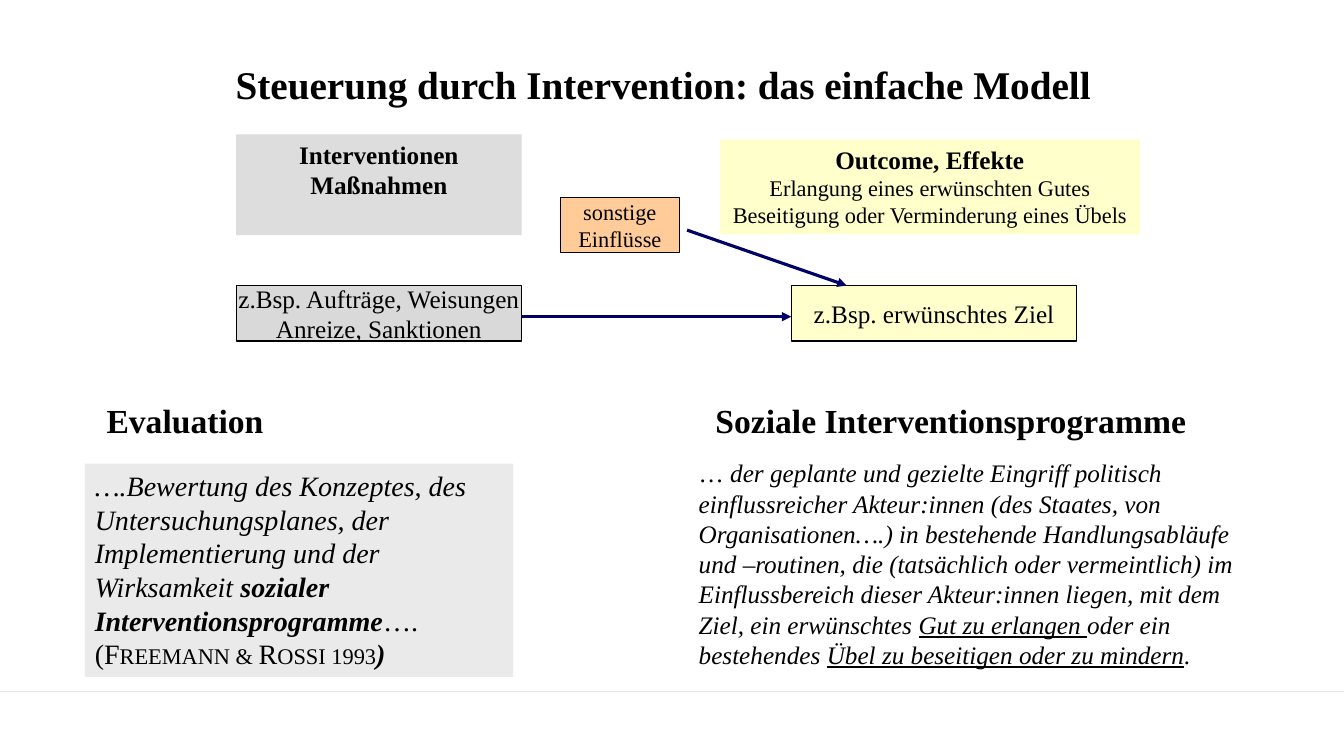
from lxml import etree
from pptx import Presentation
from pptx.dml.color import RGBColor
from pptx.enum.shapes import MSO_CONNECTOR, MSO_SHAPE
from pptx.enum.text import MSO_ANCHOR, PP_ALIGN
from pptx.oxml.ns import qn
from pptx.util import Inches, Pt

FONT = "Times New Roman"
BLACK, NAVY, YELLOW = "000000", "000066", "FFFFCC"
COLS, ROWS = 160, 90
BOX_W, BOX_H = 34, 6.6
LEFT_X, GOAL_X, CHAIN_Y = 28.1, 94.2, 34


def grid(value):
    """Convert grid cells (square, 12 per inch) to a length."""
    return Inches(value / 12)


def rgb(color):
    return RGBColor.from_string(color)


def add_runs(p, runs):
    """Add (text, style) runs; style letters: b, i, u and c for small caps."""
    for text, style in runs:
        for i, line in enumerate(text.split("\n")):
            if i:
                p.add_line_break()
            if not line:
                continue
            r = p.add_run()
            r.text = line
            if "b" in style:
                r.font.bold = True
            if "i" in style:
                r.font.italic = True
            if "u" in style:
                r.font.underline = True
            if "c" in style:
                r._r.get_or_add_rPr().set("cap", "small")


def write(shape, paragraphs, align, anchor, wrap):
    """Fill a shape with (size, bold, runs) paragraphs."""
    tf = shape.text_frame
    tf.word_wrap = wrap
    tf.vertical_anchor = anchor
    for i, (size, bold, runs) in enumerate(paragraphs):
        p = tf.paragraphs[0] if i == 0 else tf.add_paragraph()
        p.alignment = align
        p.font.name = FONT
        p.font.size = Pt(size)
        p.font.color.rgb = rgb(BLACK)
        p.font.bold = bold
        add_runs(p, runs)


def add_text(s, box, paragraphs, align=PP_ALIGN.LEFT, anchor=MSO_ANCHOR.TOP, wrap=True):
    shape = s.shapes.add_textbox(*map(grid, box))
    write(shape, paragraphs, align, anchor, wrap)


def add_box(s, box, fill, paragraphs, align=PP_ALIGN.CENTER, outlined=False):
    """Add a filled box; outlined boxes hold unwrapped text in the middle."""
    shape = s.shapes.add_shape(MSO_SHAPE.RECTANGLE, *map(grid, box))
    shape.shadow.inherit = False
    shape.fill.solid()
    shape.fill.fore_color.rgb = rgb(fill)
    if outlined:
        shape.line.color.rgb = rgb(BLACK)
        shape.line.width = Pt(0.75)
    else:
        shape.line.fill.background()
    anchor = MSO_ANCHOR.MIDDLE if outlined else MSO_ANCHOR.TOP
    write(shape, paragraphs, align, anchor, not outlined)


def add_line(s, ends, color, width, arrow=False):
    line = s.shapes.add_connector(MSO_CONNECTOR.STRAIGHT, *map(grid, ends))
    line.line.color.rgb = rgb(color)
    line.line.width = Pt(width)
    if arrow:
        etree.SubElement(line.line._get_or_add_ln(), qn("a:tailEnd"), type="triangle")
    etree.SubElement(line._element.spPr, qn("a:effectLst"))


def add_model(s):
    add_box(s, (LEFT_X, 16, BOX_W, 12), "DDDDDD",
            [(18, True, [("Interventionen\nMaßnahmen", "")])])
    add_box(s, (85.7, 16.6, 50, 11.3), YELLOW, [
        (18, True, [("Outcome, Effekte", "")]),
        (16, False, [("Erlangung eines erwünschten Gutes\n"
                      "Beseitigung oder Verminderung eines Übels", "")]),
    ])
    middle = CHAIN_Y + 3.7
    add_line(s, (LEFT_X + BOX_W, middle, GOAL_X, middle), NAVY, 2.25, arrow=True)
    for x, y, width, fill, size, text in [
        (LEFT_X, CHAIN_Y, BOX_W, "D9D9D9", 18, "z.Bsp. Aufträge, Weisungen\nAnreize, Sanktionen"),
        (GOAL_X, CHAIN_Y, BOX_W, YELLOW, 18, "z.Bsp. erwünschtes Ziel"),
        (66.7, 23.5, 14.2, "FFCC99", 16, "sonstige\nEinflüsse"),
    ]:
        add_box(s, (x, y, width, BOX_H), fill, [(size, False, [(text, "")])], outlined=True)
    add_line(s, (81.8, 27.4, 100.8, CHAIN_Y), NAVY, 2.25, arrow=True)


def add_definitions(s):
    for x, width, heading in [(11.5, 21.2, "Evaluation"),
                              (84, 59, "Soziale Interventionsprogramme")]:
        add_text(s, (x, 47, width, 6), [(24, True, [(heading, "")])], wrap=False)
    add_box(s, (10.1, 55.2, 51, 25.4), "EAEAEA", [(20, None, [
        ("….Bewertung des Konzeptes, des Untersuchungsplanes, der "
         "Implementierung und der Wirksamkeit ", "i"),
        ("sozialer Interventionsprogramme", "bi"),
        ("….\n(", ""),
        ("Freemann & Rossi 1993", "c"),
        (")", "bi"),
    ])], align=PP_ALIGN.LEFT)
    add_text(s, (82, 53.9, 70, 26.6), [(18, None, [
        ("… ", ""),
        ("der geplante und gezielte Eingriff politisch einflussreicher "
         "Akteur:innen (des Staates, von Organisationen….) in bestehende "
         "Handlungsabläufe und –routinen, die (tatsächlich oder vermeintlich) "
         "im Einflussbereich dieser Akteur:innen liegen, mit dem Ziel, ein "
         "erwünschtes ", "i"),
        ("Gut zu erlangen ", "iu"),
        ("oder ein bestehendes ", "i"),
        ("Übel zu beseitigen oder zu mindern", "iu"),
        (".", "i"),
    ])])


def main():
    prs = Presentation()
    prs.slide_width, prs.slide_height = grid(COLS), grid(ROWS)
    s = prs.slides.add_slide(prs.slide_layouts[6])
    add_line(s, (0, 82.3, COLS, 82.3), "E4E5EA", 0.5)
    add_model(s)
    add_definitions(s)
    add_text(s, (20.4, 2.5, 117.1, 15),
             [(28, True, [("Steuerung durch Intervention: das einfache Modell", "")])],
             align=PP_ALIGN.CENTER, anchor=MSO_ANCHOR.MIDDLE)
    prs.save("out.pptx")


if __name__ == "__main__":
    main()
